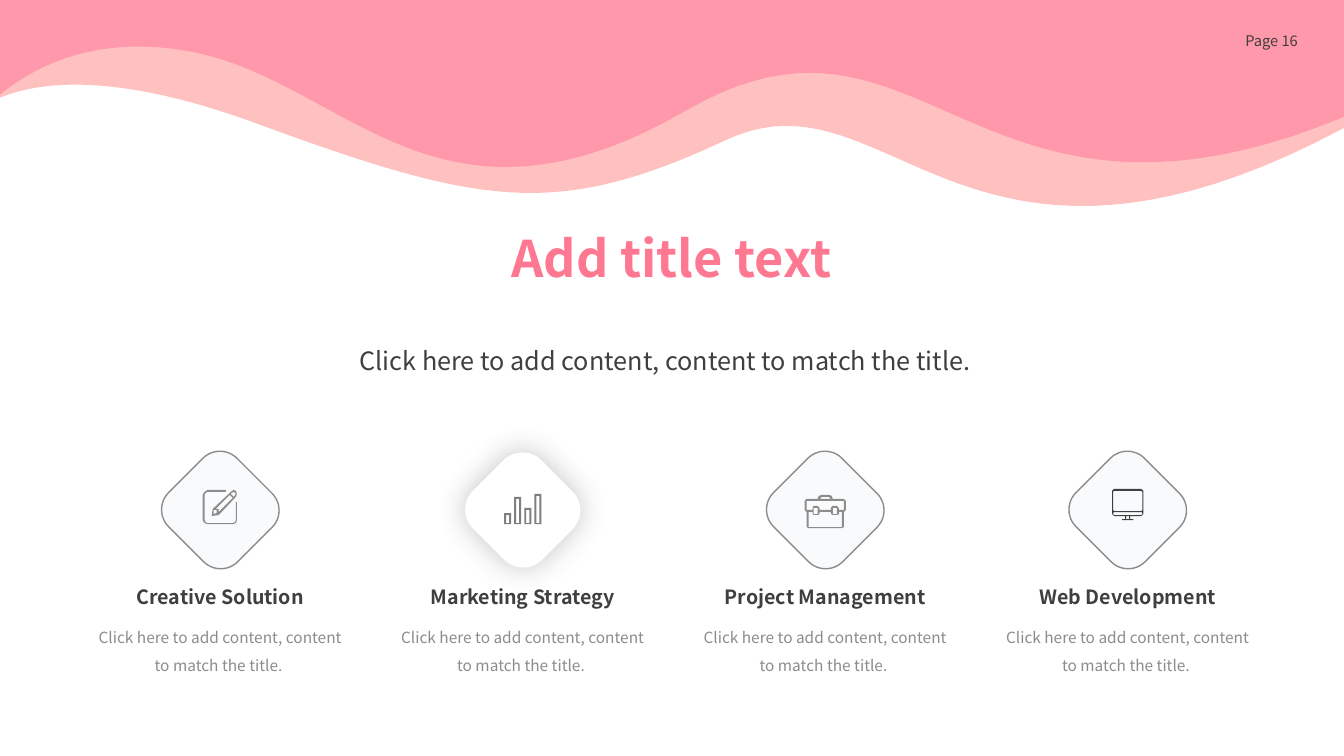
from dataclasses import dataclass

from lxml import etree
from pptx import Presentation
from pptx.dml.color import RGBColor
from pptx.enum.shapes import MSO_SHAPE
from pptx.enum.text import MSO_ANCHOR, PP_ALIGN
from pptx.oxml.ns import qn
from pptx.util import Inches, Pt

ROUNDED = MSO_SHAPE.ROUNDED_RECTANGLE
TOP, MIDDLE = MSO_ANCHOR.TOP, MSO_ANCHOR.MIDDLE
CENTER, RIGHT = PP_ALIGN.CENTER, PP_ALIGN.RIGHT

Point = tuple[float, float]
Contour = list[Point]


@dataclass(frozen=True)
class Theme:
    font: str = "Noto Sans CJK SC"
    wave_back: str = "FFC0C0"
    wave_front: str = "FF98AB"
    title: str = "FF7891"
    dark: str = "3F3F3F"
    gray: str = "8C8C8C"
    bar_gray: str = "7F7F7F"
    tile: str = "F9FAFC"
    white: str = "FFFFFF"
    title_size: float = 36
    subtitle_size: float = 18
    heading_size: float = 14
    caption_size: float = 11
    page_size: float = 10.5


@dataclass(frozen=True)
class TextStyle:
    size: float
    color: str
    bold: bool = False
    align: PP_ALIGN = CENTER
    anchor: MSO_ANCHOR = TOP
    line_spacing: float = 1.0


@dataclass(frozen=True)
class Service:
    heading: str
    icon: list[Contour]
    icon_color: str
    raised: bool = False


THEME = Theme()
WIDTH, HEIGHT = 13.33, 7.5
COLUMN_PITCH = 3
CURVE_STEPS = 40
CONTENT = "Click here to add content, content to match the title. "

PAGE_STYLE = TextStyle(THEME.page_size, THEME.dark, align=RIGHT, anchor=MIDDLE)
TITLE_STYLE = TextStyle(THEME.title_size, THEME.title, True, anchor=MIDDLE, line_spacing=0.9)
SUBTITLE_STYLE = TextStyle(THEME.subtitle_size, THEME.dark, line_spacing=0.9)
HEADING_STYLE = TextStyle(THEME.heading_size, THEME.dark, True)
CAPTION_STYLE = TextStyle(THEME.caption_size, THEME.gray, line_spacing=1.5)

# Each curve is a chain of cubic segments: start, then control, control, end.
BACK_WAVE = [(0, 0.97), (0.38, 0.81), (1.14, 0.71), (2.53, 1.22), (4.77, 2.04), (5.51, 2.18),
             (7.2, 1.39), (8.82, 0.63), (9.55, 3.29), (WIDTH, 1.27)]
FRONT_WAVE = [(0, 0.94), (0.34, 0.66), (0.95, 0.34), (1.88, 0.51), (3.42, 0.79), (4.33, 2.53),
              (6.8, 1.1), (9.17, -0.28), (9.64, 2.69), (WIDTH, 1.16)]


def curve_points(chain: Contour) -> Contour:
    points = [chain[0]]
    for first in range(0, len(chain) - 1, 3):
        a, b, c, d = chain[first:first + 4]
        for step in range(1, CURVE_STEPS + 1):
            t = step / CURVE_STEPS
            u = 1 - t
            points.append(tuple(u**3 * a[k] + 3 * u * u * t * b[k] + 3 * u * t * t * c[k] + t**3 * d[k]
                                for k in (0, 1)))
    return points


def box(left: float, top: float, right: float, bottom: float, cut: float = 0) -> Contour:
    """Rectangle outline whose corners are bevelled by cut."""
    if not cut:
        return [(left, top), (right, top), (right, bottom), (left, bottom)]
    return [(left + cut, top), (right - cut, top), (right, top + cut), (right, bottom - cut),
            (right - cut, bottom), (left + cut, bottom), (left, bottom - cut), (left, top + cut)]


def pencil_icon() -> list[Contour]:
    tray = [(2.35, 4.98), (2.34, 4.98), (2.34, 5.16), (2.33, 5.18), (2.31, 5.19), (2.06, 5.19),
            (2.04, 5.18), (2.03, 5.16), (2.03, 4.91), (2.04, 4.89), (2.06, 4.88), (2.24, 4.88),
            (2.24, 4.86), (2.06, 4.86), (2.03, 4.88), (2.01, 4.91), (2.01, 5.16), (2.03, 5.19),
            (2.06, 5.2), (2.31, 5.2), (2.34, 5.19), (2.35, 5.16)]
    outline = [(2.1, 5.12), (2.17, 5.11), (2.34, 4.93), (2.35, 4.9), (2.34, 4.87), (2.32, 4.86),
               (2.29, 4.88), (2.11, 5.05)]
    tip = [(2.12, 5.06), (2.15, 5.06), (2.15, 5.09), (2.12, 5.1)]
    shaft = [(2.28, 4.91), (2.31, 4.94), (2.17, 5.08), (2.17, 5.05), (2.14, 5.05)]
    cap = [(2.3, 4.89), (2.32, 4.88), (2.34, 4.9), (2.32, 4.93), (2.29, 4.9)]
    return [tray, outline, tip, shaft, cap]


def bars_icon() -> list[Contour]:
    contours = []
    for index, top in enumerate((5.09, 4.93, 5.04, 4.9)):
        left = 5 + 0.1 * index
        contours += [box(left, top, left + 0.07, 5.2),
                     box(left + 0.02, top + 0.02, left + 0.05, 5.19)]
    return contours


def briefcase_icon() -> list[Contour]:
    body = [(8, 4.95), (8.11, 4.95), (8.12, 4.92), (8.15, 4.91), (8.22, 4.91), (8.25, 4.92),
            (8.26, 4.95), (8.37, 4.95), (8.39, 4.97), (8.39, 5.06), (8.37, 5.08), (8.37, 5.23),
            (8.35, 5.24), (8.02, 5.24), (8, 5.23), (8, 5.08), (7.98, 5.06), (7.98, 4.97)]
    handle = [(8.15, 4.93), (8.22, 4.93), (8.24, 4.95), (8.13, 4.95)]
    lid = [(8, 4.97), (8.37, 4.97), (8.37, 5.06), (8.32, 5.06), (8.32, 5.04), (8.3, 5.02),
           (8.26, 5.02), (8.24, 5.04), (8.24, 5.06), (8.13, 5.06), (8.13, 5.04), (8.11, 5.02),
           (8.07, 5.02), (8.06, 5.04), (8.06, 5.06), (8, 5.06)]
    base = [(8.02, 5.08), (8.06, 5.08), (8.06, 5.1), (8.07, 5.11), (8.11, 5.11), (8.13, 5.1),
            (8.13, 5.08), (8.24, 5.08), (8.24, 5.1), (8.26, 5.11), (8.3, 5.11), (8.32, 5.1),
            (8.32, 5.08), (8.35, 5.08), (8.35, 5.23), (8.02, 5.23)]
    clasps = [box(left, 5.04, left + 0.04, 5.1) for left in (8.07, 8.26)]
    return [body, handle, lid, base, *clasps]


def monitor_icon() -> list[Contour]:
    legs = [box(left, 5.12, left + 0.01, 5.15) for left in (11.16, 11.2)]
    return [box(11.03, 4.85, 11.34, 5.12, 0.02), box(11.04, 4.87, 11.33, 5.07, 0.01),
            box(11.04, 5.08, 11.33, 5.11, 0.01), *legs, box(11.13, 5.15, 11.24, 5.16)]


def paint(shape, color: str) -> None:
    shape.shadow.inherit = False
    shape.fill.solid()
    shape.fill.fore_color.rgb = RGBColor.from_string(color)
    shape.line.fill.background()


def add_outline(slide, contours: list[Contour], color: str) -> None:
    """Fill all contours as one freeform; inner contours become holes."""
    builder = None
    for contour in contours:
        start, *others = [(Inches(x), Inches(y)) for x, y in contour]
        if builder is None:
            builder = slide.shapes.build_freeform(*start)
        else:
            builder.move_to(*start)
        builder.add_line_segments(others, close=True)
    paint(builder.convert_to_shape(), color)


def add_text(slide, text: str, left: float, top: float, width: float, height: float,
             style: TextStyle) -> None:
    frame = slide.shapes.add_textbox(Inches(left), Inches(top), Inches(width), Inches(height)).text_frame
    frame.word_wrap = True
    frame.vertical_anchor = style.anchor
    paragraph = frame.paragraphs[0]
    paragraph.alignment = style.align
    paragraph.line_spacing = style.line_spacing
    run = paragraph.add_run()
    run.text = text
    run.font.name = THEME.font
    run.font.size = Pt(style.size)
    run.font.bold = style.bold
    run.font.color.rgb = RGBColor.from_string(style.color)


def add_glow_shadow(shape) -> None:
    effects = shape._element.spPr.find(qn("a:effectLst"))
    shadow = etree.SubElement(effects, qn("a:outerShdw"), blurRad=str(Pt(21)), dist="0", dir="0",
                              algn="ctr", rotWithShape="0")
    color = etree.SubElement(shadow, qn("a:srgbClr"), val=THEME.dark)
    etree.SubElement(color, qn("a:alpha"), val="30000")


def add_tile(slide, left: float, raised: bool) -> None:
    tile = slide.shapes.add_shape(ROUNDED, Inches(left), Inches(4.58), Inches(0.97), Inches(0.96))
    tile.rotation = 45
    tile.adjustments[0] = 0.28 if raised else 0.25
    paint(tile, THEME.white if raised else THEME.tile)
    if raised:
        add_glow_shadow(tile)
    else:
        tile.line.color.rgb = RGBColor.from_string(THEME.gray)
        tile.line.width = Pt(1)


def main() -> None:
    presentation = Presentation()
    presentation.slide_width, presentation.slide_height = Inches(WIDTH), Inches(HEIGHT)
    slide = presentation.slides.add_slide(presentation.slide_layouts[6])

    for wave, color in ((BACK_WAVE, THEME.wave_back), (FRONT_WAVE, THEME.wave_front)):
        add_outline(slide, [curve_points(wave) + [(WIDTH, 0), (0, 0)]], color)
    add_text(slide, "Page 16", 9.97, 0.2, 3, 0.4, PAGE_STYLE)
    add_text(slide, "Add title text", 4.46, 1.94, 4.4, 1.31, TITLE_STYLE)
    add_text(slide, CONTENT, 3.39, 3.41, 6.47, 0.76, SUBTITLE_STYLE)

    services = [Service("Creative Solution", pencil_icon(), THEME.gray),
                Service("Marketing Strategy", bars_icon(), THEME.bar_gray, raised=True),
                Service("Project Management", briefcase_icon(), THEME.gray),
                Service("Web Development", monitor_icon(), THEME.dark)]
    for index, service in enumerate(services):
        offset = COLUMN_PITCH * index
        add_tile(slide, 1.7 + offset, service.raised)
        add_text(slide, CONTENT, 0.86 + offset, 6.09, 2.65, 0.74, CAPTION_STYLE)
        add_text(slide, service.heading, 0.77 + offset, 5.75, 2.83, 0.38, HEADING_STYLE)
        add_outline(slide, service.icon, service.icon_color)
    presentation.save("out.pptx")


if __name__ == "__main__":
    main()
